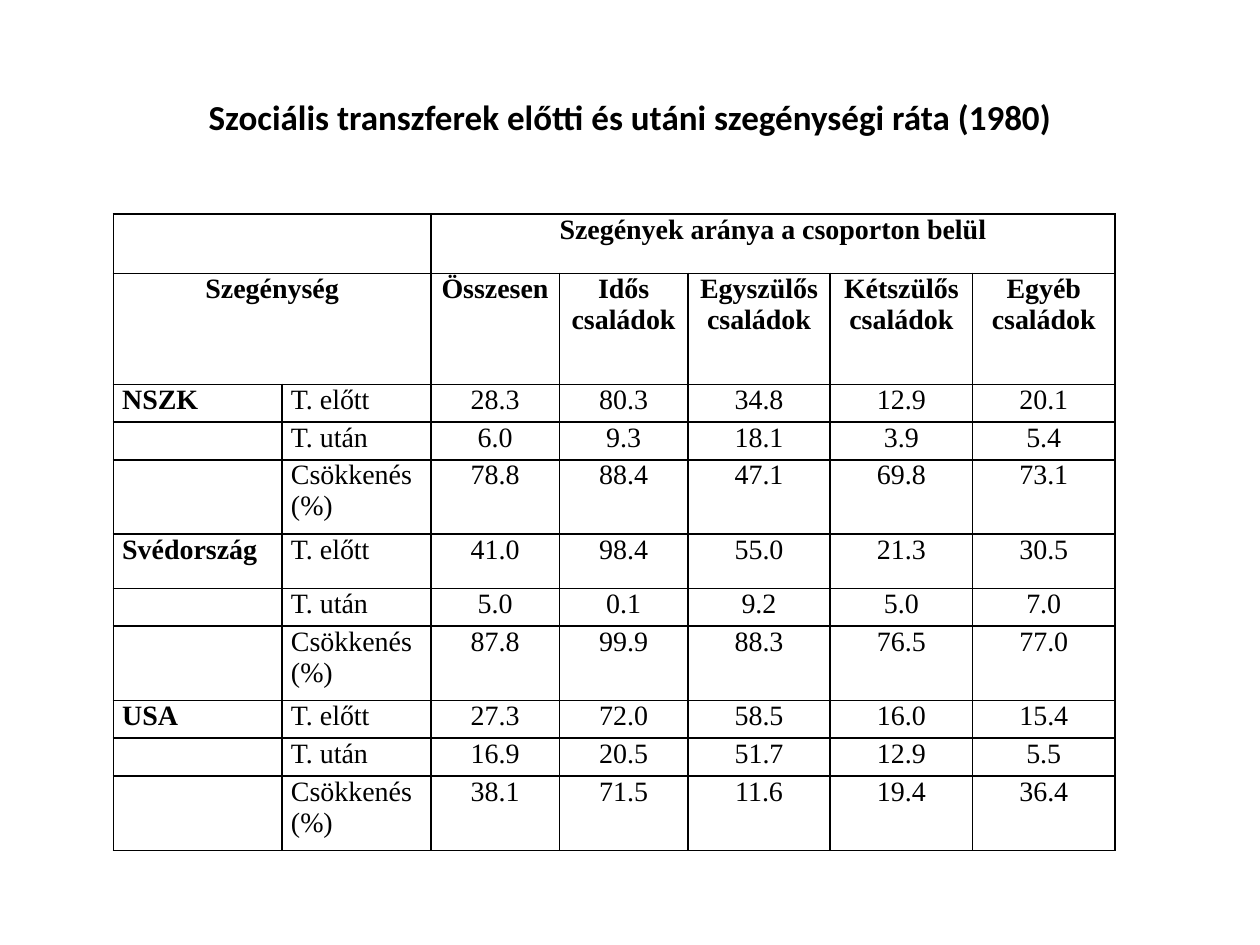
"""Build a slide with a table of poverty rates before and after social transfers."""
import lxml.etree
import pptx
import pptx.dml.color
import pptx.enum.text
import pptx.oxml.ns
import pptx.util

THEME = {
    "ink": "000000",
    "title_font": {"name": "Calibri", "size": pptx.util.Pt(20), "bold": True},
    "table_font": {"name": "Times New Roman", "size": pptx.util.Pt(16)},
    "border": pptx.util.Pt(1),
}
CELL_FORMAT = {
    "margin_left": pptx.util.Inches(0.07),
    "margin_right": pptx.util.Inches(0.07),
    "margin_top": 0,
    "margin_bottom": 0,
    "vertical_anchor": pptx.enum.text.MSO_ANCHOR.TOP,
}
CENTER = pptx.enum.text.PP_ALIGN.CENTER
LEFT = pptx.enum.text.PP_ALIGN.LEFT
COLUMN_WIDTHS = [1.34, 1.18, 1.02, 1.02, 1.13, 1.13, 1.13]
ROW_HEIGHTS = [0.47, 0.88, 0.3, 0.3, 0.59, 0.43, 0.3, 0.59, 0.3, 0.3, 0.59]
MEASURES = ["T. előtt", "T. után", "Csökkenés (%)"]
RATES = {
    "NSZK": ["28.3 80.3 34.8 12.9 20.1", "6.0 9.3 18.1 3.9 5.4", "78.8 88.4 47.1 69.8 73.1"],
    "Svédország": ["41.0 98.4 55.0 21.3 30.5", "5.0 0.1 9.2 5.0 7.0", "87.8 99.9 88.3 76.5 77.0"],
    "USA": ["27.3 72.0 58.5 16.0 15.4", "16.9 20.5 51.7 12.9 5.5", "38.1 71.5 11.6 19.4 36.4"],
}


def write_text(paragraph, text, alignment, font_format):
    """Put one formatted run in the paragraph."""
    paragraph.alignment = alignment
    run = paragraph.add_run()
    run.text = text
    for name, value in font_format.items():
        setattr(run.font, name, value)
    run.font.color.rgb = pptx.dml.color.RGBColor.from_string(THEME["ink"])


def draw_borders(cell):
    """Draw a solid line on the four sides of the cell."""
    properties = cell._tc.get_or_add_tcPr()
    for side in ("a:lnL", "a:lnR", "a:lnT", "a:lnB"):
        line = lxml.etree.SubElement(properties, pptx.oxml.ns.qn(side), w=str(THEME["border"]))
        fill = lxml.etree.SubElement(line, pptx.oxml.ns.qn("a:solidFill"))
        lxml.etree.SubElement(fill, pptx.oxml.ns.qn("a:srgbClr"), val=THEME["ink"])


presentation = pptx.Presentation()
presentation.slide_width = pptx.util.Inches(10)
presentation.slide_height = pptx.util.Inches(7.5)
width, height = presentation.slide_width, presentation.slide_height
slide = presentation.slides.add_slide(presentation.slide_layouts[5])

title = slide.shapes.title
title_place = {
    "left": int(width * 0.05),
    "top": int(height * 0.04),
    "width": int(width * 0.9),
    "height": pptx.util.Inches(1.25),
}
for name, value in title_place.items():
    setattr(title, name, value)
title.text_frame.vertical_anchor = pptx.enum.text.MSO_ANCHOR.MIDDLE
write_text(
    title.text_frame.paragraphs[0],
    "Szociális transzferek előtti és utáni szegénységi ráta (1980)",
    CENTER,
    THEME["title_font"],
)

rows = [
    ["", "", "Szegények aránya a csoporton belül", "", "", "", ""],
    ["Szegénység", "", "Összesen", "Idős családok", "Egyszülős családok",
     "Kétszülős családok", "Egyéb családok"],
]
for country, country_rates in RATES.items():
    for index, (measure, rates) in enumerate(zip(MEASURES, country_rates)):
        rows.append([country if index == 0 else "", measure, *rates.split()])

table = slide.shapes.add_table(
    len(rows),
    len(COLUMN_WIDTHS),
    int(width * 0.09),
    pptx.util.Inches(1.7),
    pptx.util.Inches(sum(COLUMN_WIDTHS)),
    pptx.util.Inches(sum(ROW_HEIGHTS)),
).table
table.first_row = False
table.horz_banding = False
for column, column_width in zip(table.columns, COLUMN_WIDTHS):
    column.width = pptx.util.Inches(column_width)
for row, row_height in zip(table.rows, ROW_HEIGHTS):
    row.height = pptx.util.Inches(row_height)

for row_index, texts in enumerate(rows):
    for column_index, text in enumerate(texts):
        cell = table.cell(row_index, column_index)
        for name, value in CELL_FORMAT.items():
            setattr(cell, name, value)
        draw_borders(cell)
        cell.fill.background()
        paragraph = cell.text_frame.paragraphs[0]
        is_header = row_index < 2
        if text:
            alignment = CENTER if is_header or column_index > 1 else LEFT
            bold = is_header or column_index == 0
            write_text(paragraph, text, alignment, {**THEME["table_font"], "bold": bold})
        else:
            size = THEME["table_font"]["size"].centipoints
            lxml.etree.SubElement(paragraph._p, pptx.oxml.ns.qn("a:endParaRPr"), sz=str(size))

for row_index, first, last in [(0, 0, 1), (0, 2, 6), (1, 0, 1)]:
    table.cell(row_index, first).merge(table.cell(row_index, last))

presentation.save("out.pptx")
